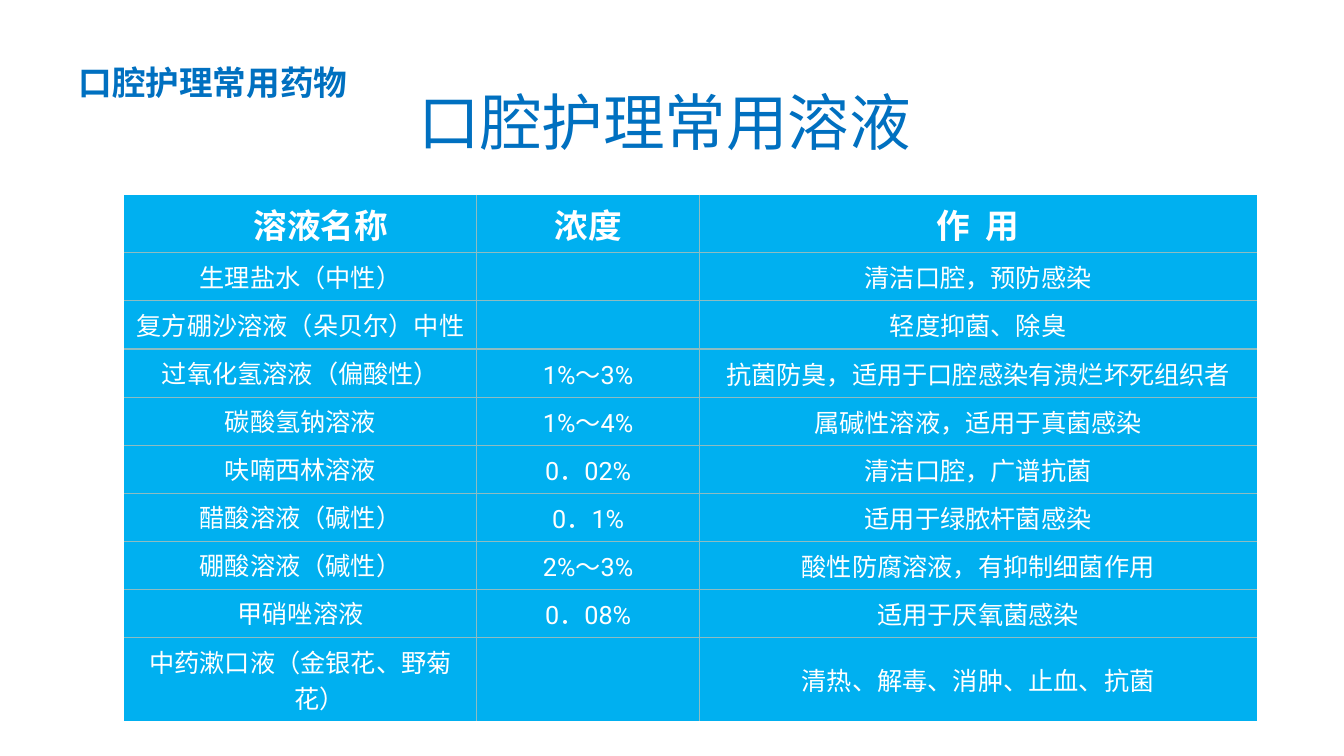
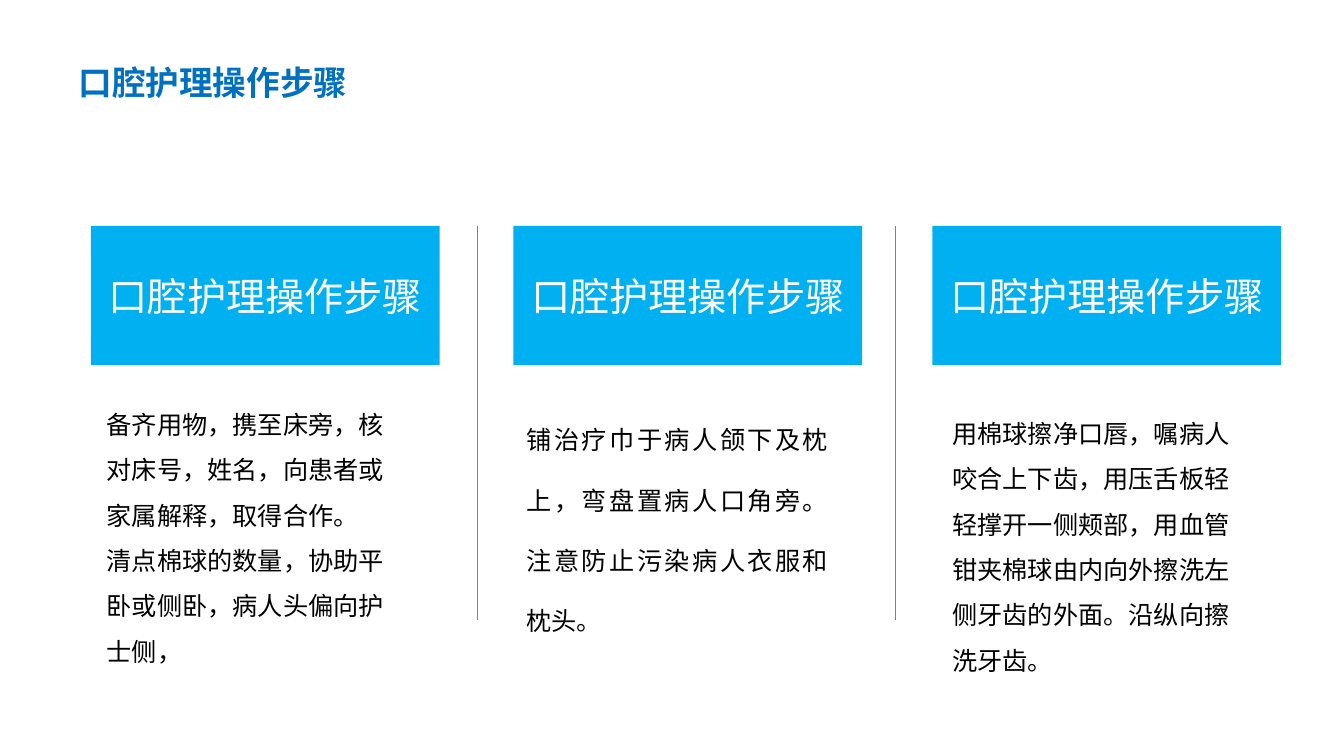
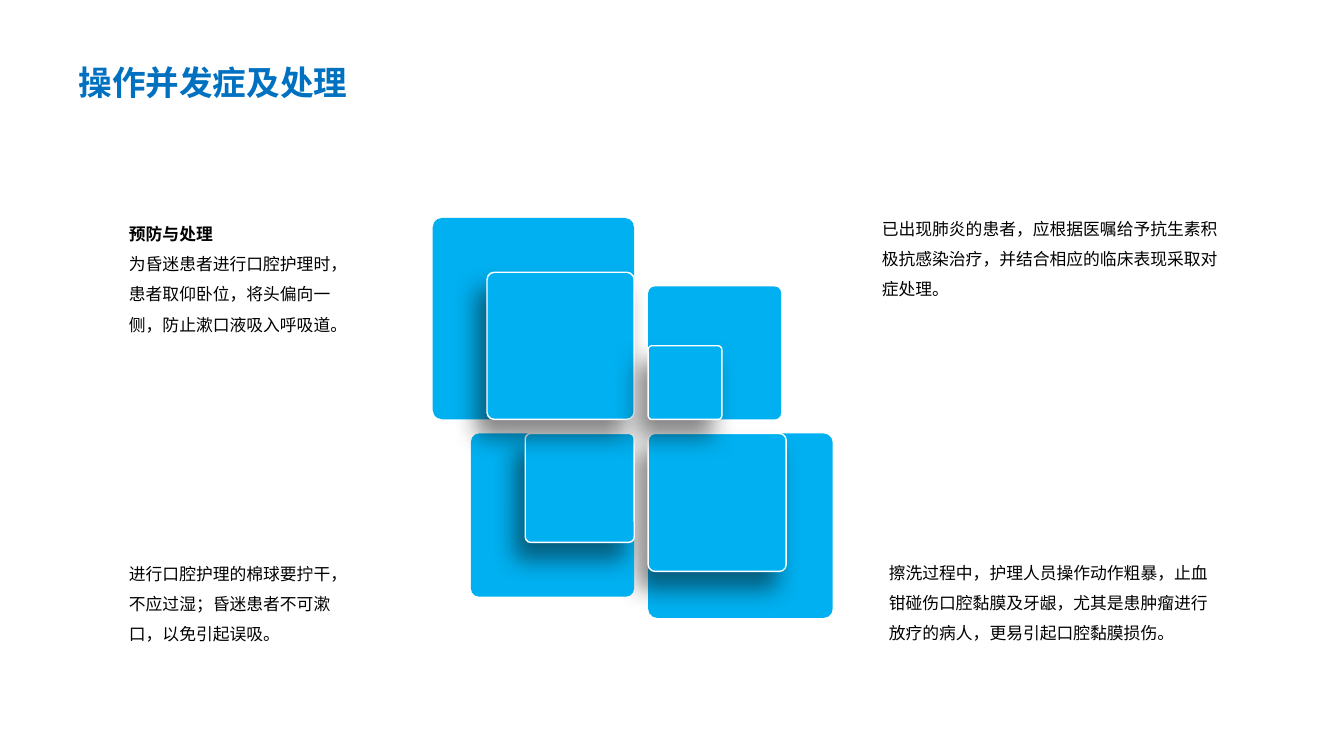
from lxml.etree import SubElement as Sub
from pptx import Presentation
from pptx.dml.color import RGBColor as RGB
from pptx.enum.shapes import MSO_CONNECTOR as Line, MSO_SHAPE as Shape
from pptx.enum.text import MSO_ANCHOR as Anchor, MSO_AUTO_SIZE as Fit, PP_ALIGN as Align
from pptx.oxml.ns import qn
from pptx.util import Pt

BLUE = RGB(0x00, 0x70, 0xC0)
SKY = RGB(0x00, 0xB0, 0xF0)
WHITE = RGB(0xFF, 0xFF, 0xFF)
BLACK = RGB(0x00, 0x00, 0x00)
GRAY = RGB(0x80, 0x80, 0x80)
RULE = RGB(0x8D, 0xBC, 0xC1)
SHADE = RGB(0x0D, 0x0D, 0x0D)
HAN, SANS, SERIF = "Noto Sans CJK SC", "Roboto", "Times New Roman"
PLAIN = "{2D5ABB26-0587-4C30-8999-92F81FD0307C}"

DRUGS = [
    ("溶液名称", "浓度", "作  用"),
    ("生理盐水（中性）", "", "清洁口腔，预防感染"),
    ("复方硼沙溶液（朵贝尔）中性", "", "轻度抑菌、除臭"),
    ("过氧化氢溶液（偏酸性）", "1%～3%", "抗菌防臭，适用于口腔感染有溃烂坏死组织者"),
    ("碳酸氢钠溶液", "1%～4%", "属碱性溶液，适用于真菌感染"),
    ("呋喃西林溶液", "0．02%", "清洁口腔，广谱抗菌"),
    ("醋酸溶液（碱性）", "0．1%", "适用于绿脓杆菌感染"),
    ("硼酸溶液（碱性）", "2%～3%", "酸性防腐溶液，有抑制细菌作用"),
    ("甲硝唑溶液", "0．08%", "适用于厌氧菌感染"),
    ("中药漱口液（金银花、野菊花）", "", "清热、解毒、消肿、止血、抗菌"),
]
WIDTHS = (252, 159, 398)
HEIGHTS = [41.5] + [34.4] * (len(DRUGS) - 2) + [59.7]

STEP = "口腔护理操作步骤"
STEPS = [
    (65, (69.1, 278), 32.4, Align.LEFT,
     ["备齐用物，携至床旁，核对床号，姓名，向患者或家属解释，取得合作。",
      "清点棉球的数量，协助平卧或侧卧，病人头偏向护士侧，"]),
    (366.8, (369, 278), 43.2, Align.JUSTIFY,
     ["铺治疗巾于病人颌下及枕上，弯盘置病人口角旁。注意防止污染病人衣服和枕头。"]),
    (666, (673.2, 284.4), 32.4, Align.LEFT,
     ["用棉球擦净口唇，嘱病人咬合上下齿，用压舌板轻轻撑开一侧颊部，"
      "用血管钳夹棉球由内向外擦洗左侧牙齿的外面。沿纵向擦洗牙齿。"]),
]
RULES = (340.6, 639.4)
CARD = (161.3, 249.1, 99.4)

LEFT, RIGHT, UPPER, LOWER = 453, 463, 299.6, 309.6
TILES = [
    (RIGHT, LOWER, (131.8, 98.6)),
    (LEFT, LOWER, (116.6, 77.8)),
    (LEFT, UPPER, (144, 105.1)),
    (RIGHT, UPPER, (95, 52.6)),
]
NOTES = [
    ((85, 149, 173.5, 91.4), 1,
     ["预防与处理", "为昏迷患者进行口腔护理时，患者取仰卧位，将头偏向一侧，防止漱口液吸入呼吸道。"]),
    ((85, 391.7, 173.5, 69.8), 0,
     ["进行口腔护理的棉球要拧干，不应过湿；昏迷患者不可漱口，以免引起误吸。"]),
    ((622.8, 145.4, 257.8, 69.8), 0,
     ["已出现肺炎的患者，应根据医嘱给予抗生素积极抗感染治疗，并结合相应的临床表现采取对症处理。"]),
    ((627.8, 391, 252.7, 69.8), 0,
     ["擦洗过程中，护理人员操作动作粗暴，止血钳碰伤口腔黏膜及牙龈，"
      "尤其是患肿瘤进行放疗的病人，更易引起口腔黏膜损伤。"]),
]


def pts(*nums):
    """Turn numbers into point lengths."""
    return [Pt(num) for num in nums]


def write(frame, text, size=18, font=SERIF, color=BLACK, bold=0,
          align=Align.LEFT, space=None, hang=0):
    """Fill a frame with a list of paragraphs, the first few of them bold."""
    for i, line in enumerate(text):
        para = frame.paragraphs[0] if i == 0 else frame.add_paragraph()
        para.alignment = align
        if space:
            para.line_spacing = space
        props = para._p.get_or_add_pPr()
        props.set("hangingPunct", "0")
        if hang:
            props.set("marL", str(Pt(hang)))
            props.set("indent", str(-Pt(hang)))
        run = para.add_run()
        run.text = line
        run.font.size = Pt(size)
        run.font.bold = i < bold
        run.font.color.rgb = color
        run.font.name = font
        Sub(run._r.get_or_add_rPr(), qn("a:ea")).set("typeface", HAN)


def label(slide, box, text, wrap=True, fit=Fit.SHAPE_TO_FIT_TEXT, mid=False, **fmt):
    """Add a text box."""
    frame = slide.shapes.add_textbox(*pts(*box)).text_frame
    frame.word_wrap = wrap
    frame.auto_size = fit
    frame.vertical_anchor = Anchor.MIDDLE if mid else Anchor.TOP
    write(frame, text, **fmt)


def block(slide, kind, box):
    """Add a flat blue shape."""
    shape = slide.shapes.add_shape(kind, *pts(*box))
    shape.shadow.inherit = False
    shape.fill.solid()
    shape.fill.fore_color.rgb = SKY
    shape.line.fill.background()
    return shape


def begin(deck, head):
    """Add a slide with its heading."""
    slide = deck.slides.add_slide(deck.slide_layouts[6])
    label(slide, (49, 26.6, 208, 46.8), [head], wrap=False, size=24,
          font=HAN, color=BLUE, bold=1, space=Pt(43))
    return slide


def edge(cell, side):
    """Draw one border of a cell."""
    line = Sub(cell._tc.get_or_add_tcPr(), qn("a:" + side), w=str(Pt(1)))
    Sub(Sub(line, qn("a:solidFill")), qn("a:srgbClr")).set("val", str(RULE))


def lift(shape):
    """Give a shape a soft shadow and a white outline."""
    shape.line.color.rgb = WHITE
    shape.line.width = Pt(1)
    glow = Sub(shape._element.spPr.find(qn("a:effectLst")), qn("a:outerShdw"),
               blurRad=str(Pt(17)), dist=str(Pt(14)), dir=str(120 * 60000),
               algn="ctr", rotWithShape="0")
    tint = Sub(glow, qn("a:srgbClr"), val=str(SHADE))
    Sub(tint, qn("a:alpha"), val="50000")


def drugs(deck):
    """Build the table of solutions."""
    slide = begin(deck, "口腔护理常用药物")
    label(slide, (174, 54.7, 612, 69.8), ["口腔护理常用溶液 "], fit=Fit.NONE, mid=True,
          size=44, font=SANS, color=BLUE, align=Align.CENTER, space=0.9)
    rows, cols = len(DRUGS), len(WIDTHS)
    box = pts(88.6, 139, sum(WIDTHS), sum(HEIGHTS))
    grid = slide.shapes.add_table(rows, cols, *box).table
    grid.first_row = grid.horz_banding = False
    grid._tbl.tblPr.find(qn("a:tableStyleId")).text = PLAIN
    for col, width in zip(grid.columns, WIDTHS):
        col.width = Pt(width)
    for r, line in enumerate(DRUGS):
        grid.rows[r].height = Pt(HEIGHTS[r])
        for c, text in enumerate(line):
            cell = grid.cell(r, c)
            sides = (("lnL", c > 0), ("lnR", c < cols - 1),
                     ("lnT", r > 0), ("lnB", r < rows - 1))
            for side, shown in sides:
                if shown:
                    edge(cell, side)
            cell.fill.solid()
            cell.fill.fore_color.rgb = SKY
            cell.vertical_anchor = Anchor.MIDDLE if c else Anchor.TOP
            if text:
                write(cell.text_frame, [text], size=18 if r else 24, font=SANS,
                      color=WHITE, bold=r == 0, align=Align.CENTER, hang=27)
    grid.cell(0, 0).margin_left = Pt(36)


def steps(deck):
    """Build the three step columns."""
    slide = begin(deck, STEP)
    top, width, height = CARD
    for x in RULES:
        rule = slide.shapes.add_connector(Line.STRAIGHT, *pts(x, top, x, 442.8))
        rule.line.color.rgb = GRAY
        rule.line.width = Pt(0.25)
        Sub(rule._element.spPr, qn("a:effectLst"))
    for x, spot, space, align, text in STEPS:
        frame = block(slide, Shape.RECTANGLE, (x, top, width, height)).text_frame
        frame.word_wrap = True
        frame.vertical_anchor = Anchor.MIDDLE
        frame.margin_left = frame.margin_right = Pt(9.4)
        write(frame, [STEP], size=28, font=SANS, color=WHITE, align=Align.CENTER)
        label(slide, (*spot, 229.7, 199.4), text, align=align, space=Pt(space))


def risks(deck):
    """Build the tiles and the notes around them."""
    slide = begin(deck, "操作并发症及处理")
    for x, y, sizes in TILES:
        for size in sizes:
            left = x - size if x == LEFT else x
            top = y - size if y == UPPER else y
            tile = block(slide, Shape.ROUNDED_RECTANGLE, (left, top, size, size))
            tile.adjustments[0] = 0.05
        lift(tile)
    for box, bold, text in NOTES:
        label(slide, box, text, size=12, bold=bold, space=Pt(21.6))


def main():
    """Build and save the deck."""
    deck = Presentation()
    deck.slide_width, deck.slide_height = pts(960, 540)
    for build in (drugs, steps, risks):
        build(deck)
    deck.save("out.pptx")


if __name__ == "__main__":
    main()
